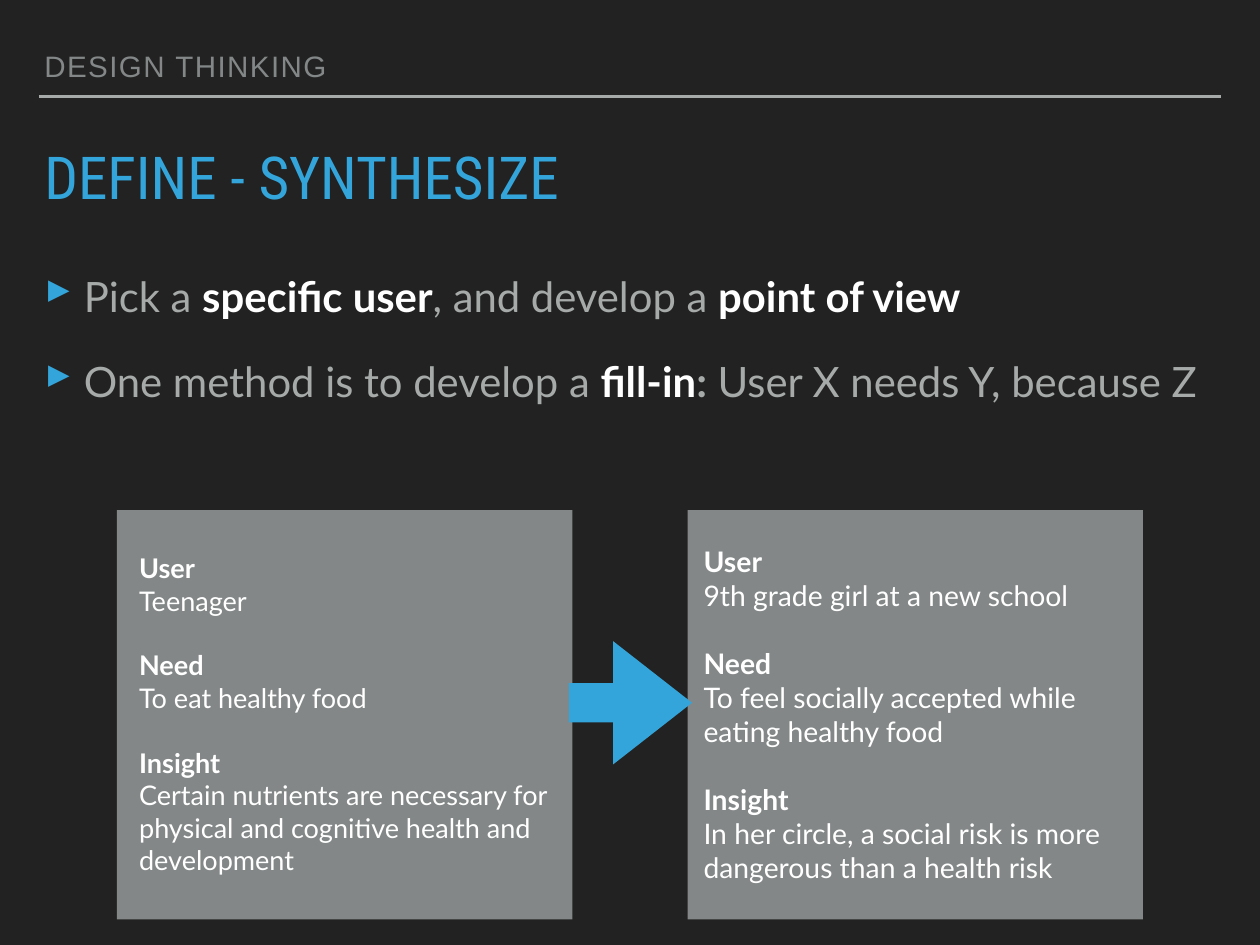
from pptx import Presentation
from pptx.dml.color import RGBColor
from pptx.enum.shapes import MSO_CONNECTOR, MSO_SHAPE
from pptx.enum.text import MSO_ANCHOR
from pptx.oxml.ns import qn
from pptx.util import Inches, Pt
from lxml.etree import SubElement

COLORS = {"bg": "222222", "blue": "34A5DA", "gray": "838787",
          "light": "A6AAA9", "white": "FFFFFF"}


class Deck:
    def __init__(self, prs, font):
        self.font = font
        self.s = prs.slides.add_slide(prs.slide_layouts[6])
        self.paint(self.s.background.fill, "bg")

    def paint(self, fill, color):
        fill.solid()
        fill.fore_color.rgb = RGBColor.from_string(COLORS[color])

    def line(self, x1, y1, x2, y2, color, width):
        c = self.s.shapes.add_connector(
            MSO_CONNECTOR.STRAIGHT, Inches(x1), Inches(y1), Inches(x2), Inches(y2))
        c.line.color.rgb = RGBColor.from_string(COLORS[color])
        c.line.width = Pt(width)
        SubElement(c._element.spPr, qn("a:effectLst"))

    def shape(self, kind, box, color, adjustments=()):
        sp = self.s.shapes.add_shape(kind, *map(Inches, box))
        sp.shadow.inherit = False
        self.paint(sp.fill, color)
        sp.line.fill.background()
        for i, value in enumerate(adjustments):
            sp.adjustments[i] = value

    def text(self, box, inset=0.06, anchor=MSO_ANCHOR.TOP):
        tf = self.s.shapes.add_textbox(*map(Inches, box)).text_frame
        tf.word_wrap = True
        tf.vertical_anchor = anchor
        tf.margin_left = tf.margin_right = Inches(inset)
        tf.margin_top = tf.margin_bottom = Inches(inset)
        return tf

    def paragraph(self, tf, before=0, spacing=1.0):
        p = tf.paragraphs[0]
        if p.runs:
            p = tf.add_paragraph()
        p.space_before = Pt(before)
        p.line_spacing = spacing
        return p

    def run(self, p, text, size, color, bold=False, font=None):
        r = p.add_run()
        r.text = text
        r.font.size = Pt(size)
        r.font.name = font or self.font
        r.font.bold = bold
        r.font.color.rgb = RGBColor.from_string(COLORS[color])
        return r

    def bullet(self, p, char, color):
        pPr = p._p.get_or_add_pPr()
        pPr.set("marL", "0")
        pPr.set("indent", "0")
        SubElement(SubElement(pPr, qn("a:buClr")), qn("a:srgbClr"), val=COLORS[color])
        SubElement(pPr, qn("a:buSzPct"), val="105000")
        SubElement(pPr, qn("a:buChar"), char=char)

    def card(self, box, text_box, inset, size, entries):
        """Gray panel with bold headings, each above its plain answer."""
        self.shape(MSO_SHAPE.RECTANGLE, box, "gray")
        tf = self.text(text_box, inset, MSO_ANCHOR.MIDDLE)
        for i, (heading, answer) in enumerate(entries):
            one_line = size * 1.2
            self.run(self.paragraph(tf, one_line if i else 0), heading, size, "white", True)
            self.run(self.paragraph(tf), answer, size, "white")


def main():
    prs = Presentation()
    prs.slide_width, prs.slide_height = Inches(14.22), Inches(10.67)
    d = Deck(prs, "Lato")

    d.line(0.44, 1.09, 13.78, 1.09, "light", 2)
    p = d.paragraph(d.text((0.44, 0.5, 12.22, 0.5), anchor=MSO_ANCHOR.BOTTOM), spacing=0.8)
    r = d.run(p, "DESIGN THINKING", 24, "gray", font="Arial")
    r.font._element.set("spc", "120")

    p = d.paragraph(d.text((0.44, 1.68, 13.33, 0.79)), 24, 0.8)
    d.run(p, "DEFINE - SYNTHESIZE", 48.1, "blue", font="Roboto Condensed")

    bullets = [
        [(" Pick a ", "light", False), ("specific user", "white", True),
         (", and develop a ", "light", False), ("point of view", "white", True)],
        [(" One method is to develop a ", "light", False), ("fill-in", "white", True),
         (":", "light", True), (" User X needs Y, because Z", "light", False)],
    ]
    tf = d.text((0.44, 3, 13.33, 2.46))
    for runs in bullets:
        p = d.paragraph(tf, 28)
        d.bullet(p, "▸", "blue")
        for text, color, bold in runs:
            d.run(p, text, 34, color, bold)

    d.card((7.76, 5.76, 5.14, 4.62), (7.94, 5.91, 4.79, 4.31), 0, 23, [
        ("User", "9th grade girl at a new school"),
        ("Need", "To feel socially accepted while eating healthy food"),
        ("Insight", "In her circle, a social risk is more dangerous than a health risk"),
    ])
    d.card((1.32, 5.76, 5.14, 4.62), (1.43, 5.84, 4.92, 4.44), 0.14, 22, [
        ("User", "Teenager"),
        ("Need", "To eat healthy food"),
        ("Insight", "Certain nutrients are necessary for physical and cognitive "
                    "health and development"),
    ])
    d.shape(MSO_SHAPE.RIGHT_ARROW, (6.42, 7.24, 1.39, 1.39), "blue", (0.32, 0.64))

    prs.save("out.pptx")


if __name__ == "__main__":
    main()
